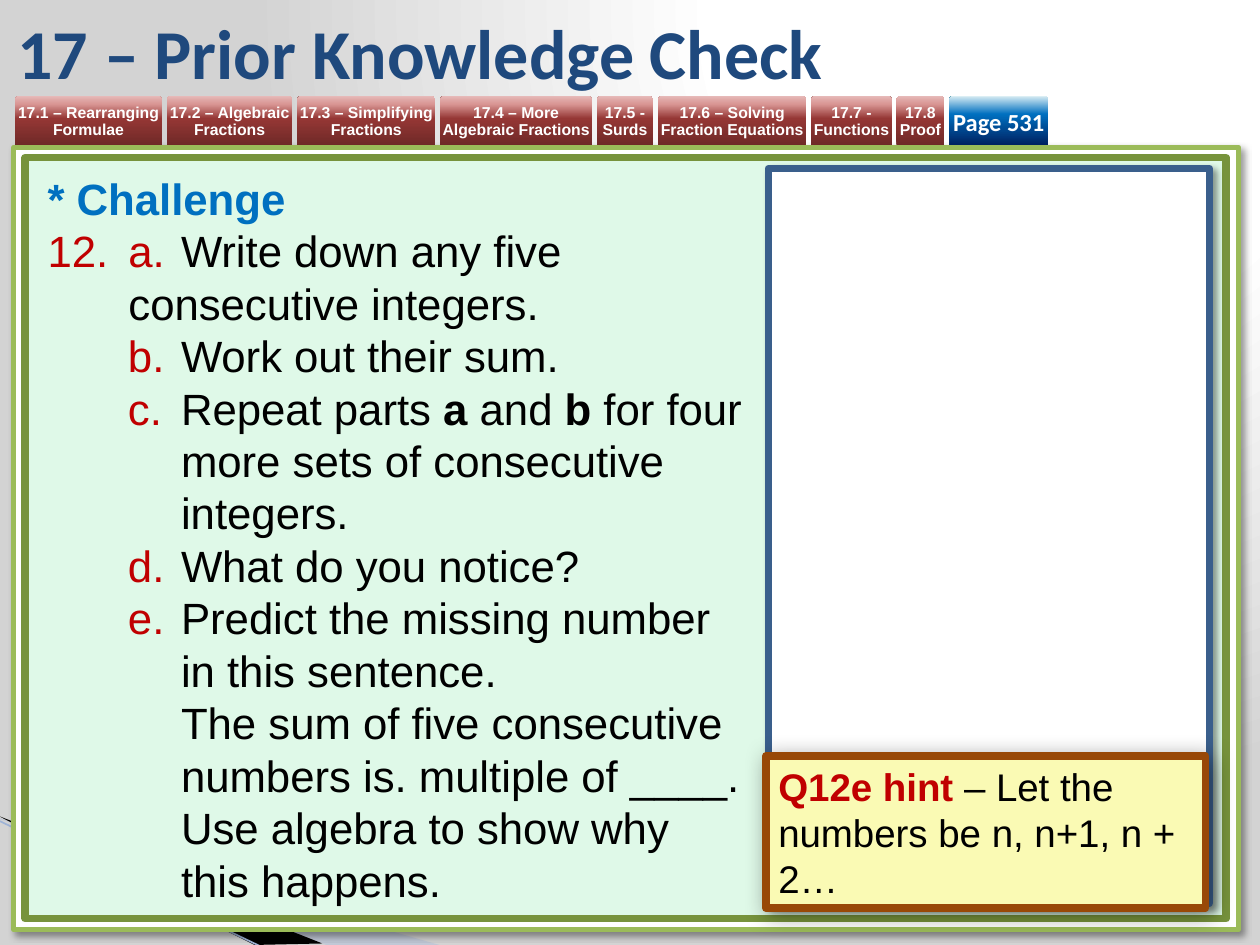
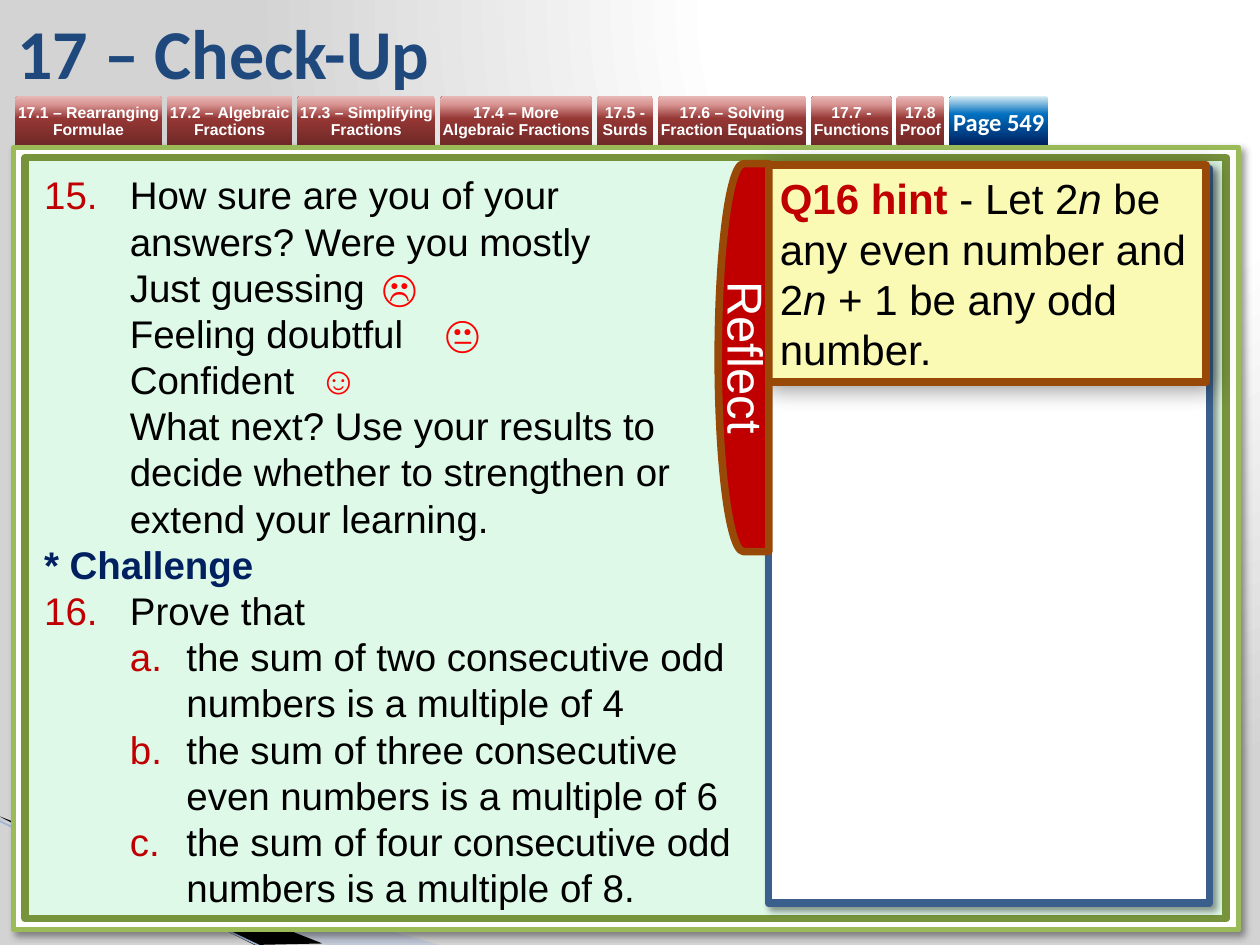
from lxml import etree
from pptx import Presentation
from pptx.dml.color import RGBColor
from pptx.enum.shapes import MSO_CONNECTOR, MSO_SHAPE
from pptx.enum.text import MSO_ANCHOR, MSO_AUTO_SIZE, PP_ALIGN
from pptx.oxml.ns import qn
from pptx.util import Cm, Pt

RECT = MSO_SHAPE.RECTANGLE
TAB = MSO_SHAPE.ROUND_2_SAME_RECTANGLE
DELAY = MSO_SHAPE.FLOWCHART_DELAY
STRAIGHT = MSO_CONNECTOR.STRAIGHT
LEFT, CENTER = PP_ALIGN.LEFT, PP_ALIGN.CENTER
TOP, MIDDLE = MSO_ANCHOR.TOP, MSO_ANCHOR.MIDDLE

BLACK = RGBColor(0x00, 0x00, 0x00)
WHITE = RGBColor(0xFF, 0xFF, 0xFF)
GREY = RGBColor(0xD3, 0xD3, 0xD3)
TITLE_BLUE = RGBColor(0x1F, 0x49, 0x7D)
PALE_BLUE = RGBColor(0xA7, 0xB9, 0xDB)
EDGE_BLUE = RGBColor(0x9E, 0xB3, 0xD6)
ANSWER_BLUE = RGBColor(0x3A, 0x5F, 0x8C)
BRIGHT_BLUE = RGBColor(0x00, 0x70, 0xC0)
NAVY = RGBColor(0x00, 0x20, 0x60)
ICE = RGBColor(0xDB, 0xEE, 0xF4)
LIGHT_GREEN = RGBColor(0x9B, 0xBB, 0x59)
DARK_GREEN = RGBColor(0x77, 0x93, 0x3C)
MINT = RGBColor(0xDF, 0xF9, 0xE8)
RED = RGBColor(0xC0, 0x00, 0x00)
FACE_RED = RGBColor(0xFF, 0x00, 0x00)
BROWN = RGBColor(0x98, 0x48, 0x07)
YELLOW = RGBColor(0xFA, 0xFA, 0xB4)

TAB_STOPS = [(0, RGBColor(0x6F, 0x29, 0x27)), (54, RGBColor(0x95, 0x37, 0x35)),
             (83, RGBColor(0xD9, 0x96, 0x94)), (100, RGBColor(0xE6, 0xB9, 0xB8))]
PAGE_STOPS = [(0, NAVY), (63, BRIGHT_BLUE), (100, ICE)]
BACK_STOPS = [(0, WHITE), (40, WHITE), (100, GREY)]

BODY_FONT, HEAD_FONT = "Arial", "Calibri"
THICK = 4.33
TAB_GAP = 0.09
SECTIONS = [("17.1 – Rearranging Formulae", 2.97), ("17.2 – Algebraic Fractions", 2.54),
            ("17.3 – Simplifying Fractions", 2.79), ("17.4 – More Algebraic Fractions", 3.07),
            ("17.5 - Surds", 1.14), ("17.6 – Solving Fraction Equations", 3.0),
            ("17.7 - Functions", 1.63), ("17.8 Proof", 0.97)]
PAGE_WIDTH = 2.01

# Regions as left, top, width, height in centimetres
TITLE_BOX = (0.1, 0.13, 21.0, 1.8)
TABS_BOX = (0.3, 1.93, 20.8, 1.0)
PANEL_BOX = (0.28, 2.97, 24.69, 15.77)


def sub(parent, tag, **attrs):
    return etree.SubElement(parent, qn(tag), {k: str(v) for k, v in attrs.items()})


def set_gradient(props, stops, angle=None, focus=None):
    """Replace the empty fill of props by a linear or circular gradient."""
    grad = etree.Element(qn("a:gradFill"), rotWithShape="1")
    stop_list = sub(grad, "a:gsLst")
    for pos, color in stops:
        sub(sub(stop_list, "a:gs", pos=pos * 1000), "a:srgbClr", val=color)
    if focus:
        l, t, r, b = (v * 1000 for v in focus)
        sub(sub(grad, "a:path", path="circle"), "a:fillToRect", l=l, t=t, r=r, b=b)
    else:
        sub(grad, "a:lin", ang=angle * 60000, scaled=0)
    props.replace(props.find(qn("a:noFill")), grad)


def add_shadow(sp, blur):
    effects = sp._element.spPr.find(qn("a:effectLst"))
    shadow = sub(effects, "a:outerShdw", blurRad=Pt(blur), dist=Pt(3),
                 dir=45 * 60000, algn="tl", rotWithShape=0)
    sub(sub(shadow, "a:srgbClr", val=BLACK), "a:alpha", val=40000)


def add_box(slide, kind, box, fill=None, line=None, width=THICK, blur=None):
    sp = slide.shapes.add_shape(kind, *map(Cm, box))
    sp.shadow.inherit = False
    if fill is None:
        sp.fill.background()
    else:
        sp.fill.solid()
        sp.fill.fore_color.rgb = fill
    if line is None:
        sp.line.fill.background()
    else:
        sp.line.color.rgb = line
        sp.line.width = Pt(width)
    if blur:
        add_shadow(sp, blur)
    return sp


def setup_frame(sp, anchor, margin=None):
    tf = sp.text_frame
    tf.word_wrap = True
    tf.auto_size = MSO_AUTO_SIZE.NONE
    tf.vertical_anchor = anchor
    if margin is not None:
        tf.margin_left = tf.margin_right = tf.margin_top = tf.margin_bottom = margin
    return tf


def add_runs(p, runs, size, font=BODY_FONT):
    """Add (text, colour, style) runs; style may hold b and i, a newline is a line break."""
    for text, color, style in runs:
        for i, part in enumerate(text.split("\n")):
            if i:
                p.add_line_break()
            if part:
                r = p.add_run()
                r.text = part
                r.font.name, r.font.size = font, Pt(size)
                r.font.bold, r.font.italic = "b" in style, "i" in style
                r.font.color.rgb = color


def fill_one(sp, runs, size, align=LEFT, font=BODY_FONT, spacing=None, margin=None):
    p = setup_frame(sp, MIDDLE, margin).paragraphs[0]
    p.alignment = align
    if spacing:
        p.line_spacing = Pt(spacing)
    add_runs(p, runs, size, font)


def format_list(p, level=0, left=0, hang=0, number=None, tabs=()):
    """Set indents (cm), tab stops (cm) and a (scheme, start) red number."""
    p.level = level
    props = p._p.get_or_add_pPr()
    props.set("marL", str(Cm(left)))
    props.set("indent", str(-Cm(hang)))
    if number:
        scheme, start = number
        sub(sub(props, "a:buClr"), "a:srgbClr", val=RED)
        sub(props, "a:buFont", typeface="+mj-lt")
        sub(props, "a:buAutoNum", type=scheme, startAt=start)
    else:
        sub(props, "a:buNone")
    stops = sub(props, "a:tabLst")
    for pos in tabs:
        sub(stops, "a:tab", pos=Cm(pos), algn="l")


def add_questions(slide, box, size, items):
    """Write (list format, runs) paragraphs."""
    tf = setup_frame(slide.shapes.add_textbox(*map(Cm, box)), TOP)
    for i, (layout, runs) in enumerate(items):
        p = tf.add_paragraph() if i else tf.paragraphs[0]
        format_list(p, **layout)
        p.line_spacing = Pt(size * 1.2)
        add_runs(p, runs, size)


def add_corner(slide):
    """Slanted bands in the lower left corner."""
    bands = [(PALE_BLUE, [(-0.03, 16.51), (8.86, 19.05), (6.58, 19.05), (-0.03, 16.48)]),
             (BLACK, [(0, 16.46), (6.5, 19.02), (5.13, 19.05), (0.03, 16.48)])]
    for color, points in bands:
        start, *rest = [(Cm(x), Cm(y)) for x, y in points]
        builder = slide.shapes.build_freeform(*start)
        builder.add_line_segments(rest)
        sp = builder.convert_to_shape()
        sp.shadow.inherit = False
        sp.fill.solid()
        sp.fill.fore_color.rgb = color
        sp.line.fill.background()
        if color == PALE_BLUE:
            sub(sp._element.spPr.find(".//" + qn("a:srgbClr")), "a:alpha", val=40000)
    edge = slide.shapes.add_connector(STRAIGHT, Cm(-0.03), Cm(16.54), Cm(5.3), Cm(19.1))
    edge.line.color.rgb = EDGE_BLUE
    edge.line.width = Pt(0.95)
    sub(edge._element.spPr, "a:effectLst")


def add_panel(slide, box):
    """Double green frame with the white answer area on its right."""
    x, y, w, h = box
    add_box(slide, RECT, box, WHITE, LIGHT_GREEN, 3, blur=4)
    add_box(slide, RECT, (x + 0.23, y + 0.21, w - 0.48, h - 0.43), MINT, DARK_GREEN)
    add_box(slide, RECT, (x + 15.21, y + 0.43, 8.89, 14.81), WHITE, ANSWER_BLUE, blur=4)


def add_tabs(slide, box, page):
    x, y, _, h = box
    tabs = [(text, w, TAB_STOPS, 9, BODY_FONT, 10) for text, w in SECTIONS]
    tabs.append((page, PAGE_WIDTH, PAGE_STOPS, 14, HEAD_FONT, None))
    for text, w, stops, size, font, spacing in tabs:
        sp = add_box(slide, TAB, (x, y, w, h))
        sp.adjustments[0] = 0.1
        set_gradient(sp._element.spPr, stops, angle=270)
        fill_one(sp, [(text, WHITE, "b")], size, CENTER, font, spacing, margin=0)
        x += w + TAB_GAP


def add_hint(slide, box, size, runs):
    sp = add_box(slide, RECT, box, YELLOW, BROWN, blur=13)
    fill_one(sp, runs, size, spacing=size * 1.2)


def add_reflect(slide, box):
    sp = add_box(slide, DELAY, box, RED, BROWN)
    sp._element.spPr.find(qn("a:xfrm")).set("flipH", "1")
    fill_one(sp, [("Reflect", WHITE, "")], 28, CENTER, margin=0)
    sp.text_frame._txBody.bodyPr.set("vert", "vert")


def add_chapter_slide(prs, title, page):
    slide = prs.slides.add_slide(prs.slide_layouts[5])
    slide.background.fill.background()
    set_gradient(slide.element.find(".//" + qn("p:bgPr")), BACK_STOPS, focus=(65, 0, 0, 98))
    sp = slide.shapes.title
    sp.left, sp.top, sp.width, sp.height = map(Cm, TITLE_BOX)
    fill_one(sp, [(title, TITLE_BLUE, "b")], 40, font=HEAD_FONT)
    add_corner(slide)
    add_panel(slide, PANEL_BOX)
    add_tabs(slide, TABS_BOX, page)
    return slide


def build_prior_knowledge(prs):
    slide = add_chapter_slide(prs, "17 – Prior Knowledge Check", "Page 531")
    heading = dict(tabs=(2.54, 6.99))
    question = dict(left=1.63, hang=1.63, number=("arabicPeriod", 12), tabs=(2.69, 6.99))
    part = dict(level=1, left=2.69, hang=1.07, number=("alphaLcPeriod", 2), tabs=(6.99,))
    add_questions(slide, (0.71, 3.33, 14.6, 15.21), 25, [
        (heading, [("* Challenge", BRIGHT_BLUE, "b")]),
        (question, [("a.", RED, ""),
                    (" \tWrite down any five \tconsecutive integers.", BLACK, "")]),
        (part, [("Work out their sum.", BLACK, "")]),
        (part, [("Repeat parts ", BLACK, ""), ("a", BLACK, "b"), (" and ", BLACK, ""),
                ("b", BLACK, "b"),
                (" for four more sets of consecutive integers.", BLACK, "")]),
        (part, [("What do you notice?", BLACK, "")]),
        (part, [("Predict the missing number in this sentence.\n"
                 "The sum of five consecutive numbers is. multiple of ____.\n"
                 "Use algebra to show why this happens.", BLACK, "")]),
    ])
    add_hint(slide, (15.44, 15.24, 8.86, 3.07), 22, [
        ("Q12e hint ", RED, "b"), ("– Let the numbers be n, n+1, n + 2…", BLACK, "")])


def build_check_up(prs):
    slide = add_chapter_slide(prs, "17 – Check-Up", "Page 549")
    heading = dict(level=1, tabs=(2.54, 7.01))
    question = dict(heading, left=1.73, hang=1.73)
    feeling = dict(level=2, left=1.73, tabs=(2.54, 8.23))
    part = dict(level=2, left=2.87, hang=1.14, number=("alphaLcPeriod", 1), tabs=(7.01,))
    add_questions(slide, (0.64, 3.33, 14.66, 15.29), 22, [
        (dict(question, number=("arabicPeriod", 15)),
         [("How sure are you of your \nanswers? Were you mostly", BLACK, "")]),
        (feeling, [("Just guessing \t", BLACK, ""), ("☹", FACE_RED, "b")]),
        (feeling, [("Feeling doubtful \t", BLACK, ""), ("😐", FACE_RED, "b")]),
        (feeling, [("Confident\t", BLACK, ""), ("☺\n", FACE_RED, "b"),
                   ("What next? Use your results to decide whether to strengthen "
                    "or extend your learning.", BLACK, "")]),
        (heading, [("* Challenge", NAVY, "b")]),
        (dict(question, number=("arabicPeriod", 16)), [("Prove that", BLACK, "")]),
        (part, [("the sum of two consecutive odd numbers is a multiple of 4", BLACK, "")]),
        (part, [("the sum of three consecutive even numbers is a multiple of 6", BLACK, "")]),
        (part, [("the sum of four consecutive odd numbers is a multiple of 8.", BLACK, "")]),
    ])
    add_hint(slide, (15.47, 3.33, 8.84, 4.37), 24, [
        ("Q16 hint", RED, "b"), (" - Let 2", BLACK, ""), ("n", BLACK, "i"),
        (" be any even number and 2", BLACK, ""), ("n ", BLACK, "i"),
        ("+ 1 be any odd number.", BLACK, "")])
    add_reflect(slide, (14.48, 3.3, 1.02, 7.82))


def main():
    prs = Presentation()
    prs.slide_width, prs.slide_height = Cm(25.4), Cm(19.05)
    build_prior_knowledge(prs)
    build_check_up(prs)
    prs.save("out.pptx")


if __name__ == "__main__":
    main()
